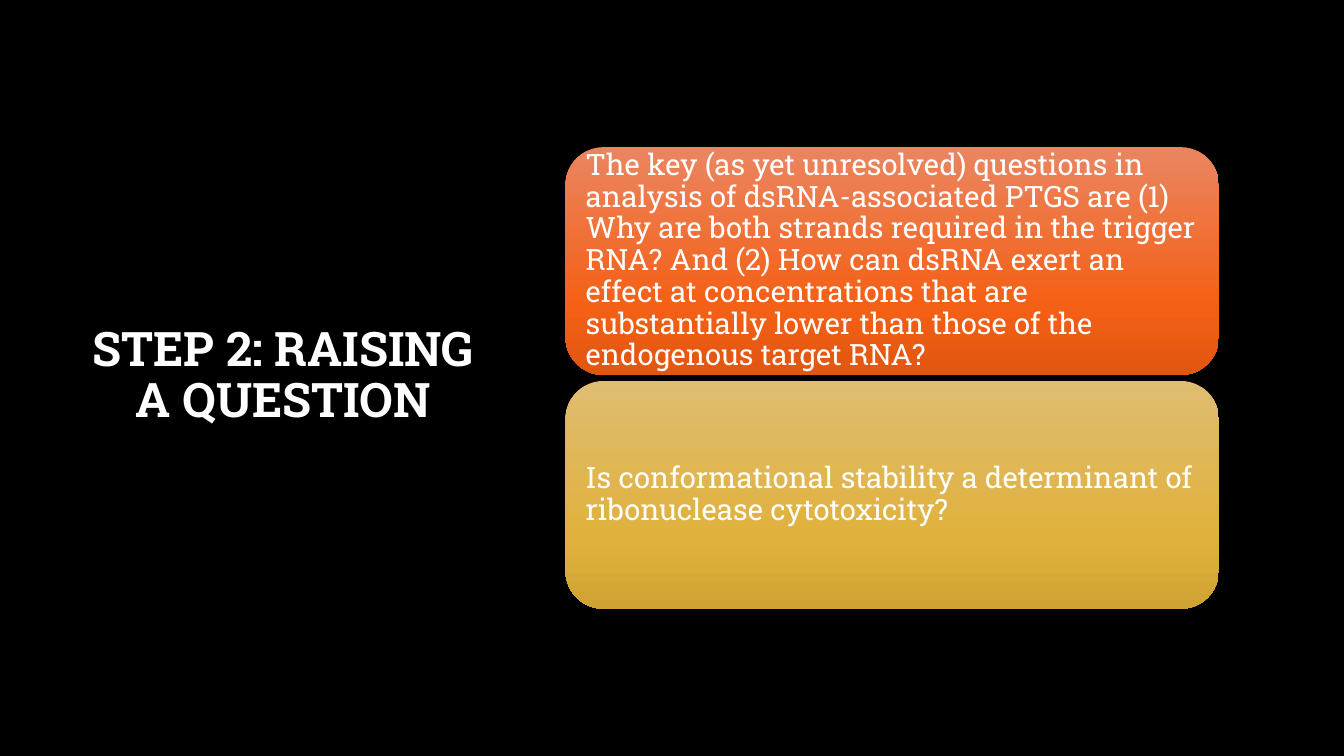
from copy import deepcopy
from dataclasses import dataclass

from pptx import Presentation
from pptx.dml.color import RGBColor as Rgb
from pptx.enum.shapes import MSO_SHAPE as Preset
from pptx.enum.text import MSO_ANCHOR as Anchor, PP_ALIGN as Align
from pptx.oxml.ns import qn
from pptx.slide import Slide
from pptx.text.text import TextFrame
from pptx.util import Inches, Pt

SLIDE_WIDTH, SLIDE_HEIGHT = Inches(13.33), Inches(7.5)
COLUMN, ROW = SLIDE_WIDTH / 100, SLIDE_HEIGHT / 100

BLACK = Rgb(0x00, 0x00, 0x00)
WHITE = Rgb(0xFF, 0xFF, 0xFF)
ORANGE = (Rgb(0xEB, 0x85, 0x60), Rgb(0xF4, 0x60, 0x16), Rgb(0xE1, 0x56, 0x10))
GOLD = (Rgb(0xDF, 0xBD, 0x72), Rgb(0xE0, 0xB1, 0x3C), Rgb(0xCF, 0xA2, 0x33))
STOP_POSITIONS = (0, 0.69, 1)

FONT = "Roboto Slab"
CARD_INSET = Inches(0.09)
CARD_HEIGHT = 30.13
CARD_GAP = 0.8


@dataclass(frozen=True)
class Area:
    column: float
    row: float
    columns: float
    rows: float

    def box(self) -> tuple[int, int, int, int]:
        return (round(self.column * COLUMN), round(self.row * ROW),
                round(self.columns * COLUMN), round(self.rows * ROW))


@dataclass(frozen=True)
class Question:
    wording: str
    gradient: tuple[Rgb, Rgb, Rgb]


TITLE_AREA = Area(6.15, 8.93, 29.86, 81.73)
CARDS_AREA = Area(42.08, 19.47, 48.61, 2 * CARD_HEIGHT + CARD_GAP)

QUESTIONS = (
    Question(
        "The key (as yet unresolved) questions in analysis of dsRNA-associated "
        "PTGS are (1) Why are both strands required in the trigger RNA? And (2) "
        "How can dsRNA exert an effect at concentrations that are substantially "
        "lower than those of the endogenous target RNA?",
        ORANGE,
    ),
    Question(
        "Is conformational stability a determinant of ribonuclease cytotoxicity?",
        GOLD,
    ),
)


def write(frame: TextFrame, wording: str, size: float, align: Align,
          bold: bool = False) -> None:
    frame.word_wrap = True
    frame.vertical_anchor = Anchor.MIDDLE
    paragraph = frame.paragraphs[0]
    paragraph.alignment = align
    paragraph.line_spacing = 0.9
    run = paragraph.add_run()
    run.text = wording
    run.font.name = FONT
    run.font.size = Pt(size)
    run.font.bold = bold
    run.font.color.rgb = WHITE


def add_title(slide: Slide, wording: str) -> None:
    title = slide.shapes.add_textbox(*TITLE_AREA.box())
    write(title.text_frame, wording, 34, Align.CENTER, bold=True)


def add_card(slide: Slide, question: Question, area: Area) -> None:
    card = slide.shapes.add_shape(Preset.ROUNDED_RECTANGLE, *area.box())
    card.shadow.inherit = False
    card.line.fill.background()

    card.fill.gradient()
    card.fill.gradient_angle = 270
    stop_list = card._element.spPr.find(qn("a:gradFill")).find(qn("a:gsLst"))
    stop_list.append(deepcopy(stop_list[0]))
    stops = zip(card.fill.gradient_stops, STOP_POSITIONS, question.gradient)
    for stop, position, color in stops:
        stop.position = position
        stop.color.rgb = color

    frame = card.text_frame
    frame.margin_left = frame.margin_right = CARD_INSET
    frame.margin_top = frame.margin_bottom = CARD_INSET
    write(frame, question.wording, 21, Align.LEFT)


def main() -> None:
    deck = Presentation()
    deck.slide_width, deck.slide_height = SLIDE_WIDTH, SLIDE_HEIGHT
    slide = deck.slides.add_slide(deck.slide_layouts[6])
    slide.background.fill.solid()
    slide.background.fill.fore_color.rgb = BLACK

    add_title(slide, "STEP 2: RAISING A QUESTION")
    for index, question in enumerate(QUESTIONS):
        row = CARDS_AREA.row + index * (CARD_HEIGHT + CARD_GAP)
        area = Area(CARDS_AREA.column, row, CARDS_AREA.columns, CARD_HEIGHT)
        add_card(slide, question, area)

    deck.save("out.pptx")


if __name__ == "__main__":
    main()
